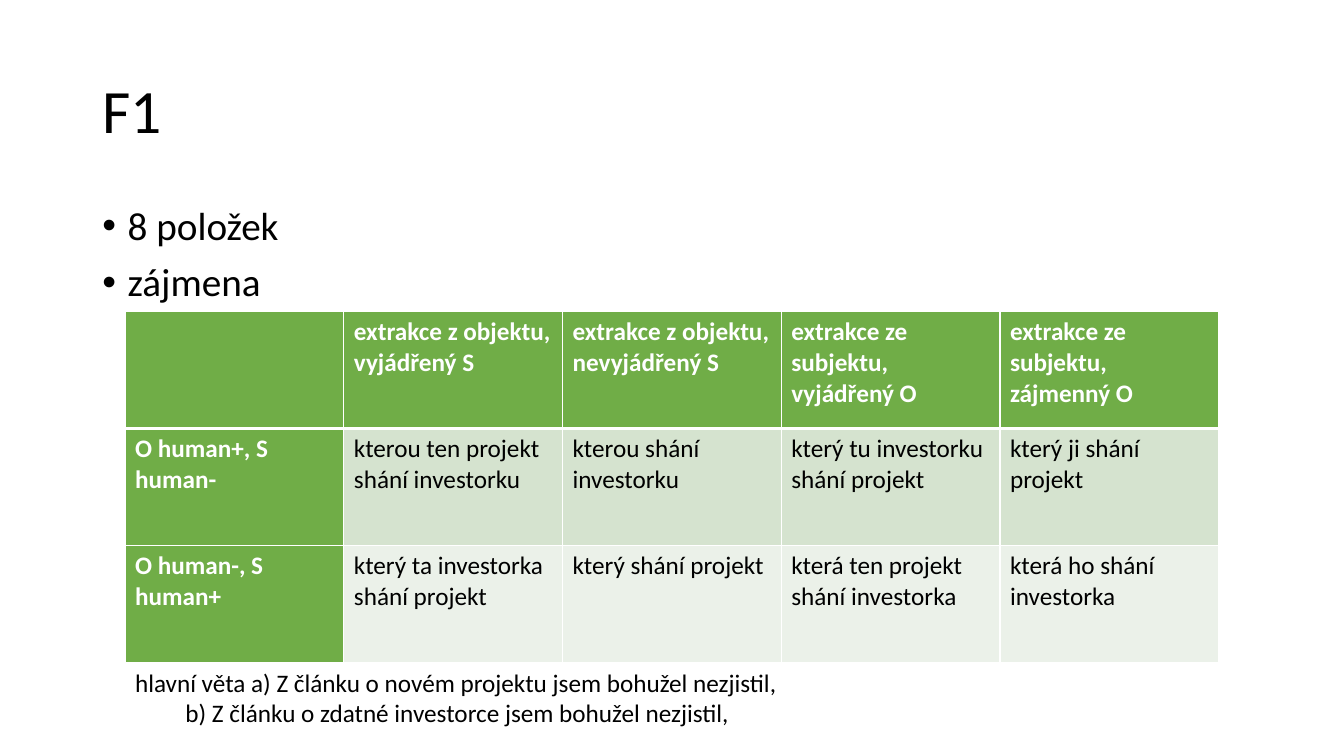
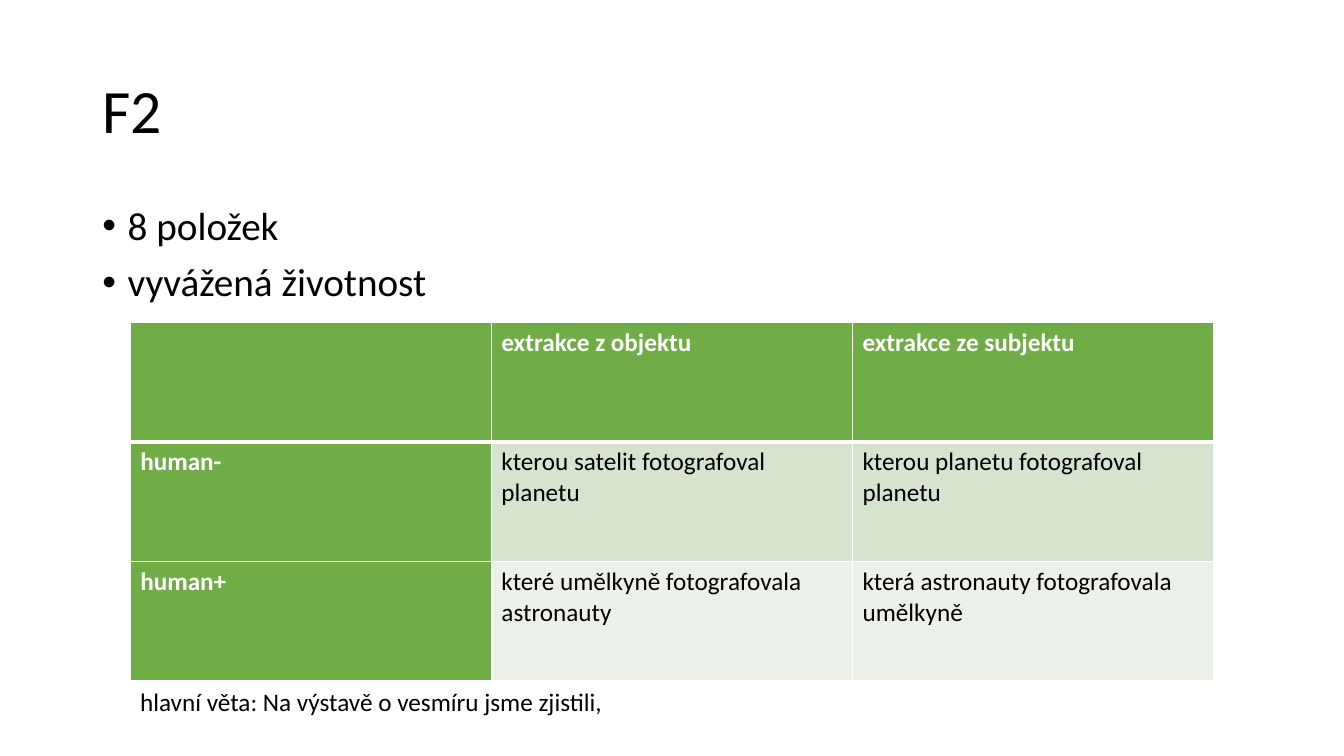
from lxml import etree
from pptx import Presentation
from pptx.dml.color import RGBColor
from pptx.enum.text import MSO_ANCHOR, MSO_AUTO_SIZE, PP_ALIGN
from pptx.oxml.ns import qn
from pptx.util import Pt

MIDDLE, TOP = MSO_ANCHOR.MIDDLE, MSO_ANCHOR.TOP
LEFT = PP_ALIGN.LEFT
NO_FIT, GROW = MSO_AUTO_SIZE.NONE, MSO_AUTO_SIZE.SHAPE_TO_FIT_TEXT

# Shared style
FONT = "Calibri"
BLACK, WHITE, GREEN = "000000", "FFFFFF", "70AD47"
BANDS = ("D5E3CF", "EBF1E9")
MARGIN, CONTENT_W = 66, 828


def rgb(value):
    return RGBColor.from_string(value)


def place(sp, left, top, width, height):
    sp.left, sp.top = Pt(left), Pt(top)
    sp.width, sp.height = Pt(width), Pt(height)


def style(tf, size, color=BLACK, bold=False):
    for p in tf.paragraphs:
        p.alignment = LEFT
        for r in p.runs:
            r.font.name, r.font.size, r.font.bold = FONT, Pt(size), bold
            r.font.color.rgb = rgb(color)


# Title and bullet list
def fill_title(sp, text):
    place(sp, MARGIN, 28.8, CONTENT_W, 104.4)
    tf = sp.text_frame
    tf.text = text
    tf.auto_size, tf.vertical_anchor = NO_FIT, MIDDLE
    tf.paragraphs[0].line_spacing = 0.9
    style(tf, 44)


def fill_bullets(sp, items):
    place(sp, MARGIN, 144, CONTENT_W, 342.7)
    tf = sp.text_frame
    tf.text = "\n".join(items)
    tf.auto_size, tf.vertical_anchor = NO_FIT, TOP
    style(tf, 28)
    for p in tf.paragraphs:
        p.line_spacing, p.space_before = 0.9, Pt(10)
        pPr = p._p.get_or_add_pPr()
        pPr.set("marL", str(Pt(18)))
        pPr.set("indent", str(-Pt(18)))
        etree.SubElement(pPr, qn("a:buFont"), typeface="Arial")
        etree.SubElement(pPr, qn("a:buChar"), char="•")


# Table
def set_borders(cell, top, bottom):
    tcPr = cell._tc.get_or_add_tcPr()
    for side, width in (("L", 1), ("R", 1), ("T", top), ("B", bottom)):
        ln = etree.SubElement(tcPr, qn(f"a:ln{side}"), w=str(Pt(width)))
        solid = etree.SubElement(ln, qn("a:solidFill"))
        etree.SubElement(solid, qn("a:srgbClr"), val=WHITE)


def add_grid(slide, rows, left, top, width, row_h):
    n_rows, n_cols = len(rows), len(rows[0])
    table = slide.shapes.add_table(n_rows, n_cols, Pt(left), Pt(top),
                                   Pt(width), Pt(row_h * n_rows)).table
    table.first_col = True
    for col in table.columns:
        col.width = Pt(width / n_cols)
    for i, texts in enumerate(rows):
        table.rows[i].height = Pt(row_h)
        for j, text in enumerate(texts):
            cell = table.cell(i, j)
            header = i == 0 or j == 0
            set_borders(cell, 3 if i == 1 else 1, 3 if i == 0 else 1)
            cell.fill.solid()
            cell.fill.fore_color.rgb = rgb(GREEN if header else BANDS[(i - 1) % 2])
            cell.text_frame.text = text
            style(cell.text_frame, 18, WHITE if header else BLACK, header)


# Main clause below the table
def add_note(slide, lines, left, top, width):
    sp = slide.shapes.add_textbox(Pt(left), Pt(top), Pt(width),
                                  Pt(7.2 + 21.8 * len(lines)))
    tf = sp.text_frame
    tf.word_wrap, tf.auto_size = True, GROW
    tf.text = "\n".join(lines)
    style(tf, 18)


def add_slide(prs, title, bullets, rows, note, left, top, width, row_h):
    slide = prs.slides.add_slide(prs.slide_layouts[1])
    fill_title(slide.shapes.title, title)
    fill_bullets(slide.placeholders[1], bullets)
    add_grid(slide, rows, left, top, width, row_h)
    add_note(slide, note, left, top + row_h * len(rows), width)


def main():
    prs = Presentation()
    prs.slide_width, prs.slide_height = Pt(960), Pt(540)

    add_slide(
        prs, "F1", ["8 položek", "zájmena"],
        [["", "extrakce z objektu, vyjádřený S",
          "extrakce z objektu, nevyjádřený S",
          "extrakce ze subjektu, vyjádřený O",
          "extrakce ze subjektu, zájmenný O"],
         ["O human+, S human-", "kterou ten projekt shání investorku",
          "kterou shání investorku", "který tu investorku shání projekt",
          "který ji shání projekt"],
         ["O human-, S human+", "který ta investorka shání projekt",
          "který shání projekt", "která ten projekt shání investorka",
          "která ho shání investorka"]],
        ["hlavní věta a) Z článku o novém projektu jsem bohužel nezjistil,",
         "\tb) Z článku o zdatné investorce jsem bohužel nezjistil,"],
        left=89.4, top=222.5, width=781.2, row_h=83.5)

    add_slide(
        prs, "F2", ["8 položek", "vyvážená životnost"],
        [["", "extrakce z objektu", "extrakce ze subjektu"],
         ["human-", "kterou satelit fotografoval planetu",
          "kterou planetu fotografoval planetu"],
         ["human+", "které umělkyně fotografovala astronauty",
          "která astronauty fotografovala umělkyně"]],
        ["hlavní věta: Na výstavě o vesmíru jsme zjistili,"],
        left=93, top=230, width=774, row_h=85.5)

    prs.save("out.pptx")


if __name__ == "__main__":
    main()
